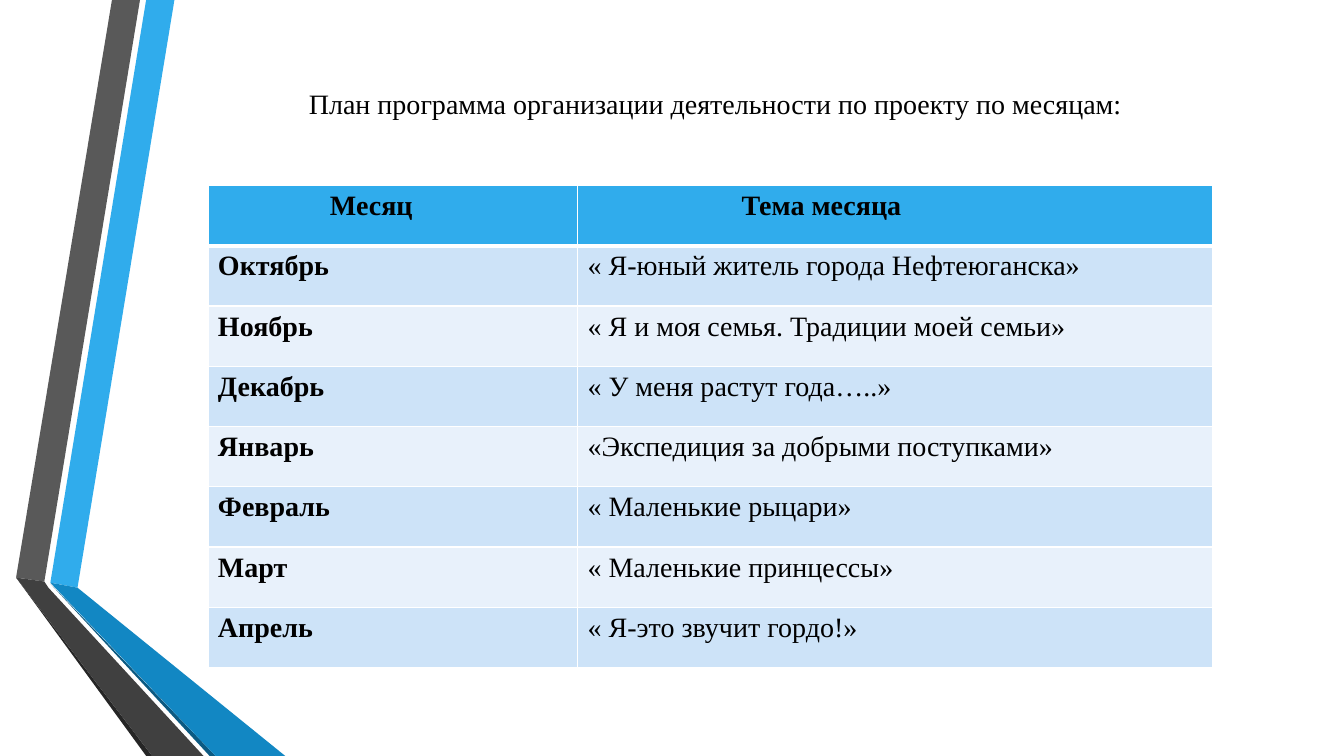
"""Builds the slide with the monthly plan of the project."""
from lxml.etree import SubElement
from pptx import Presentation
from pptx.dml.color import RGBColor
from pptx.enum.text import MSO_ANCHOR, PP_ALIGN
from pptx.oxml.ns import qn
from pptx.util import Pt

WHITE = "FFFFFF"
BLUE = "30ACEC"
BAND_COLORS = ["E8F1FB", "CDE3F8"]


def paint(fill, color):
    fill.solid()
    fill.fore_color.rgb = RGBColor.from_string(color)


def write(text_frame, text, **formats):
    paragraph = text_frame.paragraphs[0]
    run = paragraph.add_run()
    run.text = text
    formats = {"name": "Times New Roman", "size": Pt(20), **formats}
    for name, value in formats.items():
        setattr(run.font, name, value)
    paint(run.font.fill, "000000")
    return paragraph


presentation = Presentation()
presentation.slide_width = Pt(960)
presentation.slide_height = Pt(540)
slide = presentation.slides.add_slide(presentation.slide_layouts[6])

ribbons = [
    (BLUE, [(36, 416.2), (55.4, 419.8), (124.6, 0), (104.4, 0)]),
    ("595959", [(100, 0), (80, 0), (11.5, 412.6), (31.7, 415.4)]),
    ("262626", [(11.5, 412.6), (104.4, 540), (108.7, 540)]),
    ("0C5A82", [(36, 416.9), (149.8, 540), (154.1, 540)]),
    ("1287C3", [(36, 416.2), (154.1, 540), (203.8, 540), (55.4, 419.8)]),
    ("404040", [(145.4, 540), (34.6, 419.8), (31.7, 415.4), (11.5, 412.6), (108.7, 540)]),
]
for color, corners in ribbons:
    points = [(Pt(x), Pt(y)) for x, y in corners]
    builder = slide.shapes.build_freeform(*points[0])
    builder.add_line_segments(points[1:], close=True)
    shape = builder.convert_to_shape()
    shape.shadow.inherit = False
    paint(shape.fill, color)
    shape.line.fill.background()

title = slide.shapes.add_textbox(Pt(116.6), Pt(54), Pt(789), Pt(39.6))
title.text_frame.word_wrap = True
title.text_frame.vertical_anchor = MSO_ANCHOR.MIDDLE
heading = write(title.text_frame, "План программа организации деятельности по проекту по месяцам:")
heading.alignment = PP_ALIGN.CENTER

plan = [
    ("Месяц", "Тема месяца"),
    ("Октябрь", "« Я-юный житель города Нефтеюганска»"),
    ("Ноябрь", "« Я и моя семья. Традиции моей семьи»"),
    ("Декабрь", "« У меня растут года…..»"),
    ("Январь", "«Экспедиция за добрыми поступками»"),
    ("Февраль", "« Маленькие рыцари»"),
    ("Март", "« Маленькие принцессы»"),
    ("Апрель", "« Я-это звучит гордо!»"),
]
column_widths = [264, 453.6]
header_margins = [87.2, 117.2]
row_height = 43.05

frame = slide.shapes.add_table(
    len(plan), 2, Pt(148.5), Pt(132.5), Pt(sum(column_widths)), Pt(row_height * len(plan)))
table = frame.table
for column, width in zip(table.columns, column_widths):
    column.width = Pt(width)

for row_index, texts in enumerate(plan):
    table.rows[row_index].height = Pt(row_height)
    is_header = row_index == 0
    for column_index, text in enumerate(texts):
        cell = table.cell(row_index, column_index)
        write(cell.text_frame, text, bold=is_header or column_index == 0)
        if is_header:
            cell.margin_left = Pt(header_margins[column_index])
        border_widths = {
            "a:lnL": 1,
            "a:lnR": 1,
            "a:lnT": 3 if row_index == 1 else 1,
            "a:lnB": 3 if is_header else 1,
        }
        properties = cell._tc.get_or_add_tcPr()
        for tag, width in border_widths.items():
            border = SubElement(properties, qn(tag), w=str(Pt(width)))
            border_fill = SubElement(border, qn("a:solidFill"))
            SubElement(border_fill, qn("a:srgbClr"), val=WHITE)
        paint(cell.fill, BLUE if is_header else BAND_COLORS[row_index % 2])

presentation.save("out.pptx")
